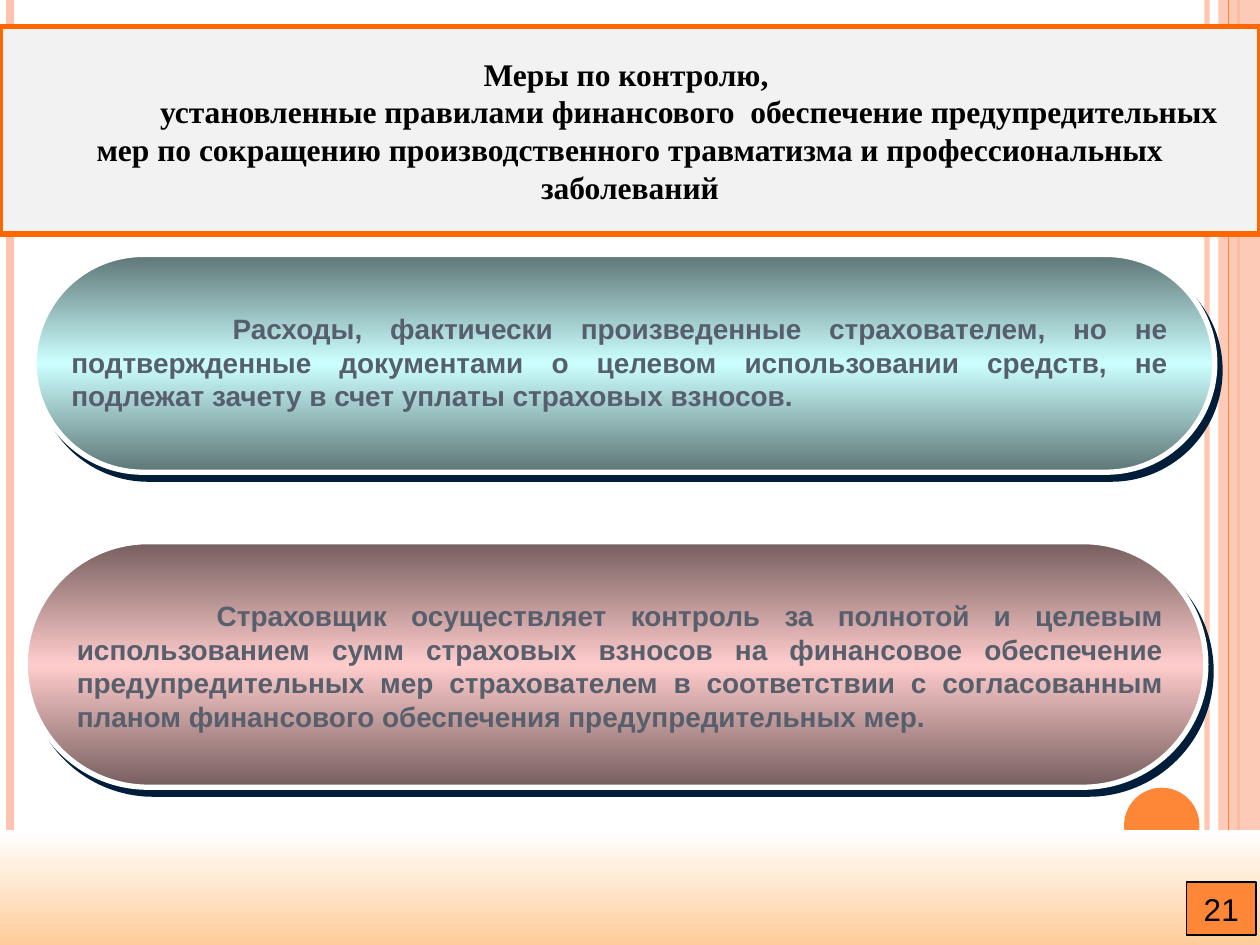
from lxml import etree
from pptx import Presentation
from pptx.dml.color import RGBColor
from pptx.enum import shapes, text
from pptx.oxml.ns import qn
from pptx.util import Cm, Pt

SHAPE = shapes.MSO_SHAPE
ALIGN = text.PP_ALIGN
WIDTH, HEIGHT = 25.4, 19.05
ORANGE, PEACH = "FE8637", "FEC3AE"

EXPENSES = (
    "Расходы, фактически произведенные страхователем, но не подтвержденные "
    "документами о целевом использовании средств, не подлежат зачету в счет "
    "уплаты страховых взносов."
)
CONTROL = (
    "Страховщик осуществляет контроль за полнотой и целевым использованием сумм "
    "страховых взносов на финансовое обеспечение предупредительных мер "
    "страхователем в соответствии с согласованным планом финансового обеспечения "
    "предупредительных мер."
)
TITLE = (
    "Меры по контролю, ",
    "установленные правилами финансового  обеспечение предупредительных мер по "
    "сокращению производственного травматизма и профессиональных заболеваний",
)


def rgb(color):
    return RGBColor.from_string(color)


def add_color(parent, color, alpha=None):
    clr = etree.SubElement(parent, qn("a:srgbClr"), val=color)
    if alpha is not None:
        etree.SubElement(clr, qn("a:alpha"), val=str(alpha * 1000))


def set_alpha(sp, alpha):
    """Make the solid fill or line colour of a shape partly transparent."""
    clr = next(sp._element.spPr.iter(qn("a:srgbClr")))
    etree.SubElement(clr, qn("a:alpha"), val=str(alpha * 1000))


def paint(sp, fill=None, line=None, width=0.75):
    if fill:
        sp.fill.solid()
        sp.fill.fore_color.rgb = rgb(fill)
    if line:
        sp.line.color.rgb = rgb(line)
        sp.line.width = Pt(width)
    else:
        sp.line.fill.background()


def add_box(s, kind, box, **style):
    sp = s.shapes.add_shape(kind, *map(Cm, box))
    sp.shadow.inherit = False
    paint(sp, **style)
    return sp


def add_gradient(sp, *colors):
    """Fill from top to bottom with evenly spaced colours."""
    sp.fill.gradient()
    sp.fill.gradient_angle = 270
    stops = sp._element.spPr.find(".//" + qn("a:gsLst"))
    for gs in list(stops):
        stops.remove(gs)
    for i, color in enumerate(colors):
        pos = 100000 * i // (len(colors) - 1)
        add_color(etree.SubElement(stops, qn("a:gs"), pos=str(pos)), color)


def add_stripe(s, x, color, width, alpha=None):
    line = s.shapes.add_connector(
        shapes.MSO_CONNECTOR.STRAIGHT, Cm(x), 0, Cm(x), Cm(HEIGHT))
    line.line.color.rgb = rgb(color)
    line.line.width = Pt(width)
    etree.SubElement(line._element.spPr, qn("a:effectLst"))
    if alpha:
        set_alpha(line, alpha)


def set_text(p, words, size, font, color="000000", bold=False,
             align=ALIGN.CENTER, indent=0):
    p.text = words
    p.alignment = align
    p.font.size, p.font.name, p.font.bold = Pt(size), font, bold
    p.font.color.rgb = rgb(color)
    if indent:
        p._p.get_or_add_pPr().set("marL", "0")
        p._p.get_or_add_pPr().set("indent", str(Cm(indent)))


def add_pill(s, box, edge, middle):
    sp = add_box(s, SHAPE.ROUNDED_RECTANGLE, box, line="FFFFFF", width=3)
    sp.adjustments[0] = 0.5
    add_gradient(sp, edge, middle, edge)
    shadow = etree.SubElement(
        sp._element.spPr.find(qn("a:effectLst")), qn("a:outerShdw"),
        dist=str(Pt(5)), dir=str(53 * 60000), algn="ctr", rotWithShape="0")
    add_color(shadow, "001D3A", 100)


def add_statement(s, box, words, indent):
    tf = s.shapes.add_textbox(*map(Cm, box)).text_frame
    tf.word_wrap = True
    tf.vertical_anchor = text.MSO_ANCHOR.MIDDLE
    set_text(tf.paragraphs[0], words, 16, "Arial", "575F6D", True,
             ALIGN.JUSTIFY, indent)


def add_background(s):
    add_stripe(s, 24.33, PEACH, 3, 93)
    add_stripe(s, 0.2, PEACH, 4.5)
    add_stripe(s, 24.97, ORANGE, 1.5)
    band = add_box(s, SHAPE.RECTANGLE, (24.56, 0, 0.84, HEIGHT), fill=PEACH)
    set_alpha(band, 87)
    add_stripe(s, 24.77, ORANGE, 0.75)
    add_box(s, SHAPE.OVAL, (22.66, 15.88, 1.52, 1.52), fill=ORANGE)
    footer = add_box(s, SHAPE.RECTANGLE, (0, 16.74, WIDTH, 2.31))
    add_gradient(footer, "FFFFFF", "FFCC99")


def add_title(s):
    sp = s.shapes.title
    sp.left, sp.top, sp.width, sp.height = map(Cm, (0, 0.53, WIDTH, 4.19))
    paint(sp, "F2F2F2", "FF6600", 3)
    tf = sp.text_frame
    tf.auto_size = text.MSO_AUTO_SIZE.NONE
    tf.vertical_anchor = text.MSO_ANCHOR.MIDDLE
    for p, words, indent in zip((tf.paragraphs[0], tf.add_paragraph()),
                                TITLE, (0, 2.38)):
        set_text(p, words, 18, "Times New Roman", bold=True, indent=indent)
    s.shapes._spTree.append(sp._element)  # bring in front of the stripes


def add_page_number(s, number):
    sp = add_box(s, SHAPE.RECTANGLE, (23.92, 17.78, 1.4, 1.07),
                 fill=ORANGE, line="000000")
    tf = sp.text_frame
    tf.word_wrap = False
    tf.vertical_anchor = text.MSO_ANCHOR.MIDDLE
    set_text(tf.paragraphs[0], number, 18, "Arial")


def main():
    prs = Presentation()
    prs.slide_width, prs.slide_height = Cm(WIDTH), Cm(HEIGHT)
    s = prs.slides.add_slide(prs.slide_layouts[5])
    add_background(s)
    add_pill(s, (0.69, 5.13, 23.8, 4.39), "5E7676", "CCFFFF")
    add_statement(s, (1.19, 6.15, 22.61, 2.29), EXPENSES, 3.25)
    add_pill(s, (0.51, 10.92, 23.8, 4.95), "765E5E", "FFCCCC")
    add_statement(s, (1.3, 11.94, 22.4, 2.97), CONTROL, 2.82)
    add_title(s)
    add_page_number(s, "21")
    prs.save("out.pptx")


if __name__ == "__main__":
    main()
